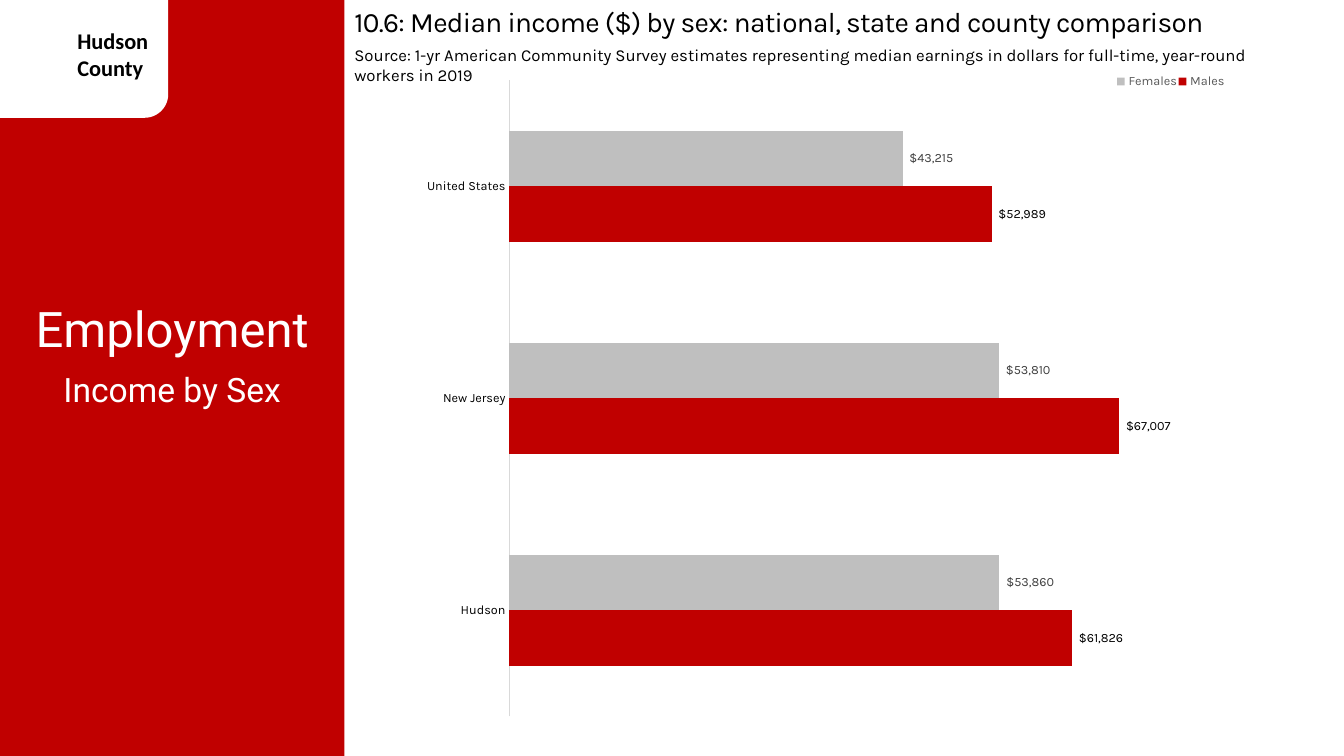
import pptx
import pptx.chart.data
import pptx.dml.color
import pptx.enum.chart
import pptx.enum.shapes
import pptx.enum.text
import pptx.oxml
import pptx.oxml.ns
import pptx.util
from pptx.util import Cm

COLOURS = {
    "red": "C00000", "white": "FFFFFF", "black": "000000", "silver": "BFBFBF",
    "axis": "D9D9D9", "legend": "595959", "female label": "404040",
}
DOLLARS = r'_("$"* #,##0_);_("$"* \(#,##0\);_("$"* "-"??_);_(@_)'


def colour(name):
    return pptx.dml.color.RGBColor.from_string(COLOURS[name])


def style(font, face, size, ink):
    font.name = face
    font.size = pptx.util.Pt(size)
    font.color.rgb = colour(ink)


deck = pptx.Presentation()
deck.slide_width, deck.slide_height = Cm(33.87), Cm(19.05)
slide = deck.slides.add_slide(deck.slide_layouts[6])

# Side panel and county tab
kinds = pptx.enum.shapes.MSO_SHAPE
for kind, place, fill in [
    (kinds.RECTANGLE, (0, 0, 8.68, 19.05), "red"),
    (kinds.ROUND_1_RECTANGLE, (0, 0, 4.24, 2.97), "white"),
]:
    shape = slide.shapes.add_shape(kind, *[Cm(length) for length in place])
    shape.shadow.inherit = False
    shape.fill.solid()
    shape.fill.fore_color.rgb = colour(fill)
    shape.line.fill.background()

# The tab comes last: its round corner is turned to the bottom right
shape.adjustments[0] = 0.2
shape._element.spPr.xfrm.set("flipV", "1")

# Texts: wording, place, face, size, ink, bold, centred, letter spacing
for wording, place, face, size, ink, bold, centred, spacing in [
    ("Hudson County", (1.7, 0.56, 2.46, 1.63), "Calibri", 16, "black", True, False, 0),
    ("Employment", (0, 7.4, 8.68, 1.75), "Roboto", 35, "white", False, True, 0),
    ("Income by Sex", (0, 9.17, 8.68, 1.27), "Roboto", 24, "white", False, True, 0),
    ("10.6: Median income ($) by sex: national, state and county comparison",
     (8.68, 0, 25.04, 1.12), "Karla", 20, "black", False, False, -50),
    ("Source: 1-yr American Community Survey estimates representing median earnings "
     "in dollars for full-time, year-round workers in 2019",
     (8.68, 1, 23.34, 1.27), "Karla", 12, "black", False, False, 0),
]:
    box = slide.shapes.add_textbox(*[Cm(length) for length in place])
    box.text_frame.word_wrap = True
    para = box.text_frame.paragraphs[0]
    if centred:
        para.alignment = pptx.enum.text.PP_ALIGN.CENTER
    span = para.add_run()
    span.text = wording
    style(span.font, face, size, ink)
    span.font.bold = bold
    if spacing:
        span.font._element.set("spc", str(spacing))

# Income chart
data = pptx.chart.data.CategoryChartData(number_format=DOLLARS)
data.categories = ["Hudson", "New Jersey", "United States"]
data.add_series("Males", [61826, 67007, 52989])
data.add_series("Females", [53860, 53810, 43215])
chart = slide.shapes.add_chart(
    pptx.enum.chart.XL_CHART_TYPE.BAR_CLUSTERED,
    Cm(10.04), Cm(1.63), Cm(21.51), Cm(17), data).chart
chart.has_title = False
style(chart.font, "Calibri", 10, "black")

bars = chart.plots[0]
bars.vary_by_categories = False
bars.gap_width = 182
bars.overlap = 0
for series, fill, ink in zip(bars.series, ["red", "silver"], ["black", "female label"]):
    series.format.fill.solid()
    series.format.fill.fore_color.rgb = colour(fill)
    labels = series.data_labels
    labels.show_value = True
    labels.number_format = DOLLARS
    labels.number_format_is_linked = False
    labels.position = pptx.enum.chart.XL_LABEL_POSITION.OUTSIDE_END
    style(labels.font, "Karla", 9, ink)

places = chart.category_axis
places.major_tick_mark = pptx.enum.chart.XL_TICK_MARK.NONE
places.format.line.color.rgb = colour("axis")
places.format.line.width = pptx.util.Pt(0.75)
style(places.tick_labels.font, "Karla", 9, "black")

income = chart.value_axis
income.minimum_scale, income.maximum_scale = 0, 80000
income.has_major_gridlines = False
income.visible = False

chart.has_legend = True
legend = chart.legend
legend.position = pptx.enum.chart.XL_LEGEND_POSITION.BOTTOM
legend.include_in_layout = False
style(legend.font, "Karla", 9, "legend")

# Fixed places of the plot and the legend, as shares of the chart
for parent, index, target, shares in [
    (chart._chartSpace.chart.plotArea, 0, '<c:layoutTarget val="inner"/>',
     (0.13, 0.023, 0.853, 0.943)),
    (legend._element, 1, "", (0.84, 0, 0.13, 0.05)),
]:
    for old in parent.findall(pptx.oxml.ns.qn("c:layout")):
        parent.remove(old)
    sizes = "".join(f'<c:{tag} val="{share}"/>' for tag, share in zip("xywh", shares))
    parent.insert(index, pptx.oxml.parse_xml(
        f'<c:layout {pptx.oxml.ns.nsdecls("c")}><c:manualLayout>{target}'
        f'<c:xMode val="edge"/><c:yMode val="edge"/>{sizes}</c:manualLayout></c:layout>'))

deck.save("out.pptx")
